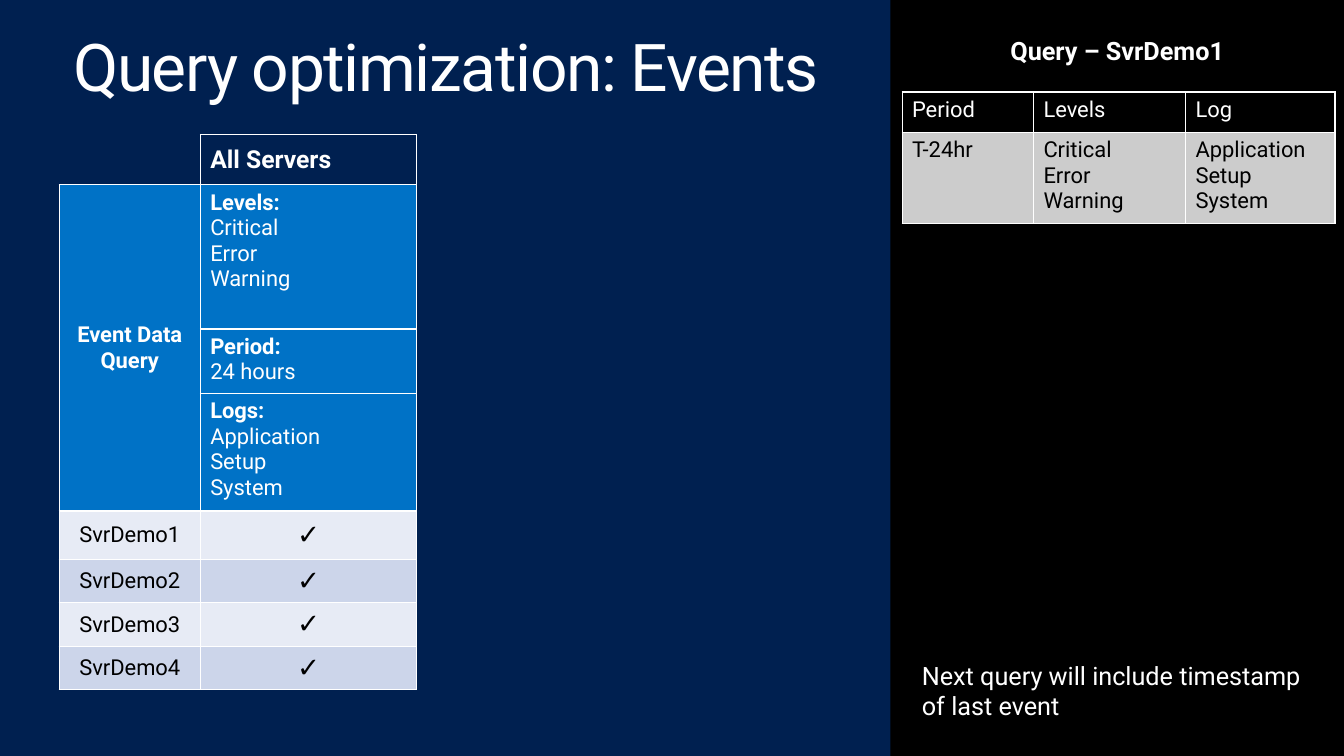
from lxml.etree import SubElement as Sub
from pptx import Presentation
from pptx.dml.color import RGBColor as RGB
from pptx.enum.shapes import MSO_SHAPE as Shape
from pptx.enum.text import MSO_ANCHOR as Anchor, PP_ALIGN as Align
from pptx.oxml.ns import qn
from pptx.util import Inches, Pt

WIDE, HIGH = Inches(13.6), Inches(7.65)
NAVY, BLUE, BLACK, WHITE = "002050", "0072C6", "000000", "FFFFFF"
GRAY, PALE, LILAC = "CCCCCC", "E7EBF5", "CCD5EA"


def across(share):
    """Turn a percentage of the slide's width into a length."""
    return round(WIDE * share / 100)


def down(share):
    """Turn a percentage of the slide's height into a length."""
    return round(HIGH * share / 100)


def place(x, y, w, h):
    return across(x), down(y), across(w), down(h)


def paint(fill, tone):
    fill.solid()
    fill.fore_color.rgb = RGB.from_string(tone)


def write(frame, text, size, tone=WHITE, bold=False, align=Align.LEFT):
    frame.text = text
    frame.word_wrap = True
    for para in frame.paragraphs:
        para.alignment = align
        for run in para.runs:
            font = run.font
            font.name, font.size, font.bold = "Roboto", Pt(size), bold
            font.color.rgb = RGB.from_string(tone)


def add_text(slide, spot, text, size):
    frame = slide.shapes.add_textbox(*spot).text_frame
    write(frame, text, size)
    return frame


def add_title(slide, text):
    frame = add_text(slide, place(4.26, 3.27, 91.47, 8.89), text, 48)
    frame.margin_left = frame.margin_right = Inches(0.16)
    frame.margin_top = frame.margin_bottom = Inches(0.1)
    para = frame.paragraphs[0]
    para.line_spacing = 0.9
    para.runs[0].font._element.set("spc", "-100")


def add_panel(slide, text):
    panel = slide.shapes.add_shape(Shape.RECTANGLE, *place(66.25, 0, 33.75, 100))
    panel.shadow.inherit = False
    paint(panel.fill, BLACK)
    panel.line.fill.background()
    frame = panel.text_frame
    frame.vertical_anchor = Anchor.TOP
    frame.margin_top = Inches(0.36)
    write(frame, text, 18.4, bold=True, align=Align.CENTER)


def add_grid(slide, x, y, cols, rows):
    spot = place(x, y, sum(cols), sum(rows))
    table = slide.shapes.add_table(len(rows), len(cols), *spot).table
    for col, share in zip(table.columns, cols):
        col.width = across(share)
    for row, share in zip(table.rows, rows):
        row.height = down(share)
    return table


def edge(cell, sides="LRTB"):
    """Draw white lines on the given sides and clear the others."""
    props = cell._tc.get_or_add_tcPr()
    for side in "LRTB":
        line = Sub(props, qn("a:ln" + side), w=str(Pt(1)))
        if side in sides:
            Sub(Sub(line, qn("a:solidFill")), qn("a:srgbClr"), val=WHITE)
        else:
            Sub(line, qn("a:noFill"))


def fill_cell(cell, text, tone, size=16, ink=WHITE, bold=False,
              align=Align.LEFT, anchor=Anchor.TOP):
    edge(cell)
    paint(cell.fill, tone)
    cell.vertical_anchor = anchor
    write(cell.text_frame, text, size, ink, bold, align)


def add_servers(slide):
    table = add_grid(slide, 4.41, 17.78, [10.5, 16.1],
                     [6.67, 19.08, 8.5, 15.56, 6.41] + [5.75] * 3)
    mid = {"align": Align.CENTER, "anchor": Anchor.MIDDLE}
    blank = table.cell(0, 0)
    edge(blank, "RB")
    blank.fill.background()
    fill_cell(table.cell(0, 1), "All Servers", NAVY, 18, bold=True,
              anchor=Anchor.MIDDLE)

    parts = ["Levels:\nCritical\nError\nWarning", "Period:\n24 hours",
             "Logs:\nApplication\nSetup\nSystem"]
    for row, text in enumerate(parts, 1):
        label = "Event Data Query" if row == 1 else ""
        fill_cell(table.cell(row, 0), label, BLUE, bold=True, **mid)
        cell = table.cell(row, 1)
        fill_cell(cell, text, BLUE)
        cell.text_frame.paragraphs[0].runs[0].font.bold = True
    table.cell(1, 0).merge(table.cell(3, 0))

    for num in range(1, 5):
        tone = PALE if num % 2 else LILAC
        fill_cell(table.cell(num + 3, 0), f"SvrDemo{num}", tone, 16, BLACK, **mid)
        fill_cell(table.cell(num + 3, 1), "✓", tone, 20, BLACK, **mid)


def add_query(slide):
    table = add_grid(slide, 67.13, 12.16, [9.78, 11.32, 11.1], [5.36, 12.03])
    query = {"Period": "T-24hr", "Levels": "Critical\nError\nWarning",
             "Log": "Application\nSetup\nSystem"}
    for col, (head, text) in enumerate(query.items()):
        fill_cell(table.cell(0, col), head, BLACK)
        fill_cell(table.cell(1, col), text, GRAY, ink=BLACK)


def main():
    deck = Presentation()
    deck.slide_width, deck.slide_height = WIDE, HIGH
    slide = deck.slides.add_slide(deck.slide_layouts[6])
    paint(slide.background.fill, NAVY)
    add_title(slide, "Query optimization: Events")
    add_panel(slide, "Query – SvrDemo1")
    add_servers(slide)
    add_query(slide)
    add_text(slide, place(67.87, 86.67, 30.74, 9.54),
             "Next query will include timestamp of last event", 18.4)
    deck.save("out.pptx")


if __name__ == "__main__":
    main()
